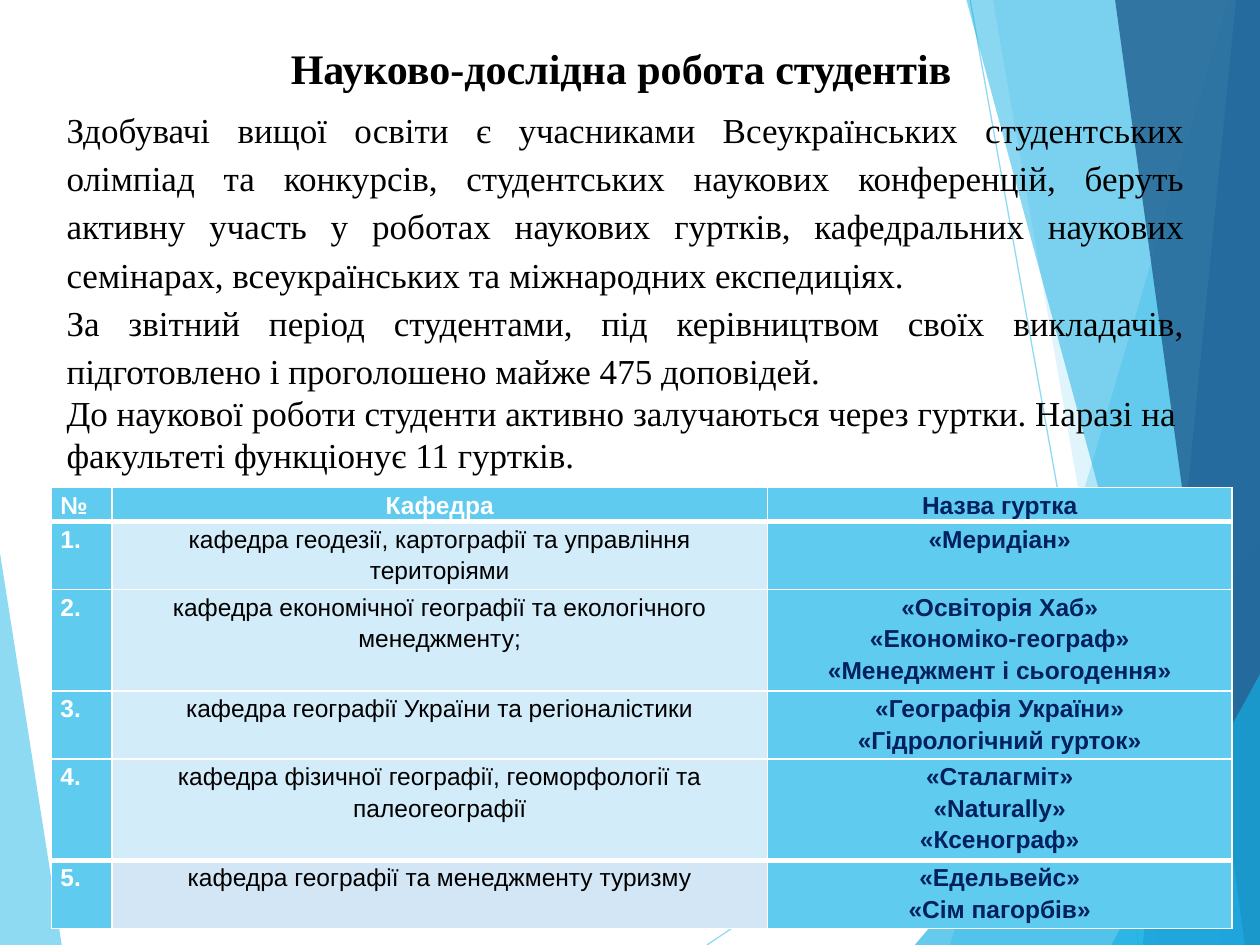
from lxml.etree import SubElement
from pptx import Presentation
from pptx.dml.color import RGBColor
from pptx.enum.shapes import MSO_CONNECTOR
from pptx.enum.text import MSO_ANCHOR, PP_ALIGN
from pptx.oxml.ns import qn
from pptx.util import Inches, Pt

COLORS = {
    "sky": "5FCBEF", "azure": "17B0E4", "blue": "2E83C3", "deep": "226292",
    "pale": "D2ECF9", "pale_last": "D3E6F5", "navy": "002060",
    "black": "000000", "white": "FFFFFF",
}

# Background facets: colour, opacity in percent, corner points
FACETS = [
    ("sky", 36, [(9.75, 0), (7.54, 7.5), (10, 7.5), (10, 0)]),
    ("sky", 20, [(7.88, 0), (9.19, 7.5), (10, 7.5), (10, 0)]),
    ("azure", 66, [(7.26, 7.5), (10, 4.29), (10, 7.5)]),
    ("azure", 50, [(7.67, 0), (9.7, 7.5), (10, 7.5), (10, 0)]),
    ("blue", 70, [(9.81, 0), (9.07, 7.5), (10, 7.5), (10, 0)]),
    ("deep", 82, [(8.85, 0), (9.88, 7.5), (10, 7.5), (10, 0)]),
    ("azure", 66, [(8.82, 7.5), (10, 5.35), (10, 7.5)]),
]
LEFT_FACET = ("sky", 70, [(0, 4.39), (0.49, 7.5), (0, 7.5)])
RAYS = [((5.61, 7.5), (10, 4.57)), ((7.7, 0), (9.04, 7.5))]

TITLE = "Науково-дослідна робота студентів"
INTRO = [
    ("Здобувачі вищої освіти є учасниками Всеукраїнських студентських олімпіад "
     "та конкурсів, студентських наукових конференцій, беруть активну участь у "
     "роботах наукових гуртків, кафедральних наукових семінарах, всеукраїнських "
     "та міжнародних експедиціях.", PP_ALIGN.JUSTIFY, 1.15),
    ("За звітний період студентами, під керівництвом своїх викладачів, "
     "підготовлено і проголошено майже 475 доповідей.", PP_ALIGN.JUSTIFY, 1.15),
    ("До наукової роботи студенти активно залучаються через гуртки. Наразі на "
     "факультеті функціонує 11 гуртків.", PP_ALIGN.LEFT, 1.0),
]
HEADER = ("№", "Кафедра", ["Назва гуртка"])
DEPARTMENTS = [
    ("кафедра геодезії, картографії та управління територіями", ["«Меридіан»"]),
    ("кафедра економічної географії та екологічного менеджменту;",
     ["«Освіторія Хаб»", "«Економіко-географ»", "«Менеджмент і сьогодення»"]),
    ("кафедра географії України та регіоналістики",
     ["«Географія України»", "«Гідрологічний гурток»"]),
    ("кафедра фізичної географії, геоморфології та палеогеографії",
     ["«Сталагміт»", "«Naturally»", "«Ксенограф»"]),
    ("кафедра географії та менеджменту туризму",
     ["«Едельвейс»", "«Сім пагорбів»"]),
]
COLUMN_WIDTHS = [0.48, 5.2, 3.69]
ROW_HEIGHTS = [0.27, 0.54, 0.8, 0.54, 0.8, 0.54]
THICK_RULES = (1, 5)  # horizontal rules, counted from the table top

TITLE_FONT = {"name": "Times New Roman", "size": Pt(24), "bold": True}
INTRO_FONT = {"name": "Times New Roman", "size": Pt(20), "bold": False}
CELL_FONT = {"name": "Arial", "size": Pt(14), "bold": True}
CELL_MARGINS = {"margin_left": Inches(0.07), "margin_right": Inches(0.07),
                "margin_top": 0, "margin_bottom": 0}


def rgb(color):
    return RGBColor.from_string(COLORS[color])


def set_all(target, values):
    for name, value in values.items():
        setattr(target, name, value)


def set_opacity(fill_parent, percent):
    for color in fill_parent.iter(qn("a:srgbClr")):
        SubElement(color, qn("a:alpha"), val=str(percent * 1000))


def add_facet(slide, color, opacity, points):
    corners = [(Inches(x), Inches(y)) for x, y in points]
    builder = slide.shapes.build_freeform(*corners[0])
    builder.add_line_segments(corners[1:], close=True)
    facet = builder.convert_to_shape()
    facet.shadow.inherit = False
    facet.fill.solid()
    facet.fill.fore_color.rgb = rgb(color)
    set_opacity(facet.element.spPr, opacity)
    facet.line.fill.background()


def add_ray(slide, start, end):
    ray = slide.shapes.add_connector(
        MSO_CONNECTOR.STRAIGHT, *(Inches(v) for v in start + end))
    ray.line.color.rgb = rgb("sky")
    ray.line.width = Pt(0.75)
    properties = ray.element.spPr
    set_opacity(properties, 70)
    SubElement(properties, qn("a:effectLst"))


def write(frame, paragraphs, font, color):
    """Fill a text frame with (text, alignment, line spacing) paragraphs."""
    frame.word_wrap = True
    for index, (text, alignment, spacing) in enumerate(paragraphs):
        paragraph = frame.add_paragraph() if index else frame.paragraphs[0]
        paragraph.alignment = alignment
        paragraph.line_spacing = spacing
        run = paragraph.add_run()
        run.text = text
        set_all(run.font, font)
        run.font.color.rgb = rgb(color)


def add_text(slide, box, paragraphs, font):
    frame = slide.shapes.add_textbox(*(Inches(v) for v in box)).text_frame
    write(frame, paragraphs, font, "black")
    return frame


def set_borders(cell, row):
    properties = cell._tc.get_or_add_tcPr()
    widths = {"L": 1, "R": 1,
              "T": 3 if row in THICK_RULES else 1,
              "B": 3 if row + 1 in THICK_RULES else 1}
    for side, width in widths.items():
        border = SubElement(properties, qn(f"a:ln{side}"), w=str(Pt(width)))
        fill = SubElement(border, qn("a:solidFill"))
        SubElement(fill, qn("a:srgbClr"), val=COLORS["white"])


def fill_cell(cell, row, lines, alignment, fill, color, bold=True):
    set_all(cell, CELL_MARGINS)
    cell.vertical_anchor = MSO_ANCHOR.TOP
    set_borders(cell, row)
    cell.fill.solid()
    cell.fill.fore_color.rgb = rgb(fill)
    write(cell.text_frame, [(line, alignment, 1.15) for line in lines],
          {**CELL_FONT, "bold": bold}, color)


def add_clubs_table(slide):
    rows = [HEADER] + [(f"{number}.", *department)
                       for number, department in enumerate(DEPARTMENTS, 1)]
    table = slide.shapes.add_table(
        len(rows), len(COLUMN_WIDTHS), Inches(0.41), Inches(3.87),
        Inches(sum(COLUMN_WIDTHS)), Inches(sum(ROW_HEIGHTS))).table
    for column, width in zip(table.columns, COLUMN_WIDTHS):
        column.width = Inches(width)
    for table_row, height in zip(table.rows, ROW_HEIGHTS):
        table_row.height = Inches(height)
    for row, (number, department, clubs) in enumerate(rows):
        if row == 0:
            style = ("sky", "white", True)
        else:
            last = row == len(rows) - 1
            style = ("pale_last" if last else "pale", "black", False)
        number_cell, department_cell, clubs_cell = table.rows[row].cells
        fill_cell(number_cell, row, [number], PP_ALIGN.JUSTIFY, "sky", "white")
        fill_cell(department_cell, row, [department], PP_ALIGN.CENTER, *style)
        fill_cell(clubs_cell, row, clubs, PP_ALIGN.CENTER, "sky", "navy")


def main():
    deck = Presentation()
    deck.slide_width, deck.slide_height = Inches(10), Inches(7.5)
    slide = deck.slides.add_slide(deck.slide_layouts[6])
    add_facet(slide, *LEFT_FACET)
    for start, end in RAYS:
        add_ray(slide, start, end)
    for facet in FACETS:
        add_facet(slide, *facet)
    add_text(slide, (0.43, 0.29, 9, 0.64),
             [(TITLE, PP_ALIGN.CENTER, 1.0)], TITLE_FONT)
    intro = add_text(slide, (0.43, 0.76, 9.37, 3.1), INTRO, INTRO_FONT)
    intro.margin_right = Inches(0.4)
    add_clubs_table(slide)
    deck.save("out.pptx")


if __name__ == "__main__":
    main()
